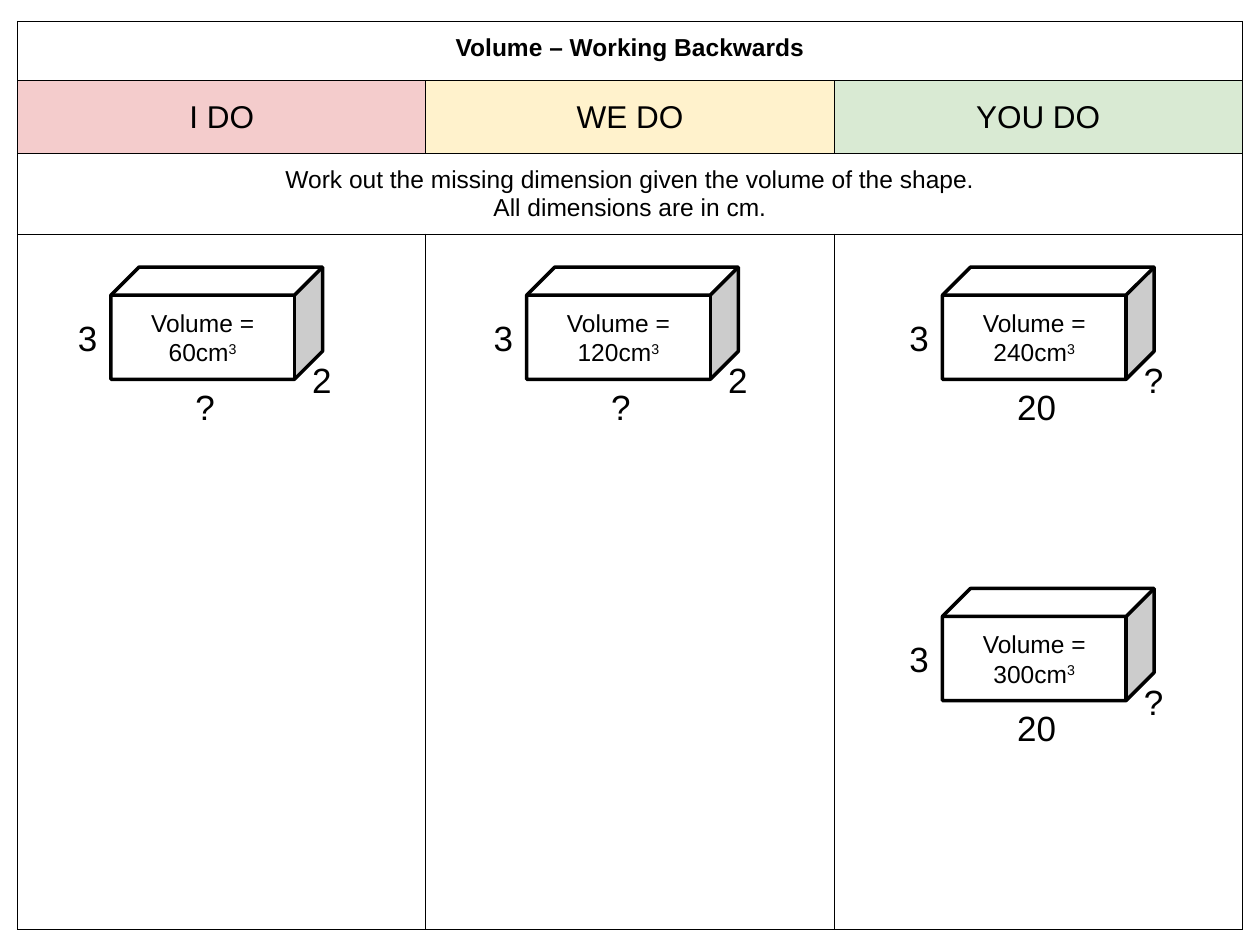
from lxml.etree import SubElement as Sub
from pptx import Presentation
from pptx.dml.color import RGBColor as Rgb
from pptx.enum.shapes import MSO_SHAPE as Shape
from pptx.enum.text import MSO_ANCHOR as Anchor, MSO_AUTO_SIZE as Fit, PP_ALIGN as Align
from pptx.oxml.ns import qn
from pptx.util import Inches, Pt

HUES = {"ink": "000000", "paper": "FFFFFF", "red": "F4CCCC", "gold": "FFF2CC", "green": "D9EAD3"}


def hue(name):
    """Return the named colour."""
    return Rgb.from_string(HUES[name])


def write(frame, text, size=14, bold=False, align=Align.CENTER, font="Arial", color="ink"):
    """Fill a frame, one paragraph a line, with a superscript after each caret."""
    for row, line in enumerate(text.split("\n")):
        para = frame.add_paragraph() if row else frame.paragraphs[0]
        para.alignment = align
        for rank, part in enumerate(line.split("^")):
            run = para.add_run()
            run.text = part
            run.font.name, run.font.size, run.font.bold = font, Pt(size), bold
            run.font.color.rgb = hue(color)
            if rank:
                run.font._element.set("baseline", "30000")


class Board:
    """Holds the style and the current slide."""

    def __init__(self, slide, edge=0.75, rim=2, pad=0.1):
        self.slide, self.edge, self.rim, self.pad = slide, edge, rim, pad

    def grid(self, left, top, cols, rows):
        """Add a plain bordered table."""
        box = [Inches(n) for n in (left, top, sum(cols), sum(rows))]
        table = self.slide.shapes.add_table(len(rows), len(cols), *box).table
        table.first_row = table.horz_banding = False
        for col, width in zip(table.columns, cols):
            col.width = Inches(width)
        for row, height in zip(table.rows, rows):
            row.height = Inches(height)
        for cell in table.iter_cells():
            self.frame(cell)
        return table

    def frame(self, cell):
        """Set the margins, borders and empty fill of a cell."""
        cell.margin_left = cell.margin_right = Inches(self.pad)
        cell.margin_top = cell.margin_bottom = Inches(self.pad)
        props = cell._tc.get_or_add_tcPr()
        for side in ("lnL", "lnR", "lnT", "lnB"):
            line = Sub(props, qn("a:" + side), w=str(Pt(self.edge)))
            Sub(Sub(line, qn("a:solidFill")), qn("a:srgbClr"), val=HUES["ink"])
        cell.fill.background()

    def cell(self, cell, text, fill=None, anchor=Anchor.MIDDLE, **style):
        """Write and colour a cell."""
        cell.vertical_anchor = anchor
        write(cell.text_frame, text, **style)
        if fill:
            cell.fill.solid()
            cell.fill.fore_color.rgb = hue(fill)

    def cube(self, left, top, text):
        """Add a cuboid with its volume."""
        box = [Inches(n) for n in (left, top, 1.68, 0.89)]
        cube = self.slide.shapes.add_shape(Shape.CUBE, *box)
        cube.shadow.inherit = False
        cube.fill.solid()
        cube.fill.fore_color.rgb = hue("paper")
        cube.line.color.rgb = hue("ink")
        cube.line.width = Pt(self.rim)
        cube.text_frame.word_wrap = True
        cube.text_frame.vertical_anchor = Anchor.MIDDLE
        write(cube.text_frame, text)

    def label(self, left, top, text):
        """Add the length of a side."""
        width = 0.2 + 0.155 * len(text)
        box = [Inches(n) for n in (left, top, width, 0.44)]
        frame = self.slide.shapes.add_textbox(*box).text_frame
        frame.word_wrap = False
        frame.auto_size = Fit.SHAPE_TO_FIT_TEXT
        write(frame, text, size=20, align=Align.LEFT)

    def task(self, left, top, volume, high, deep, wide):
        """Add a cuboid with its three sides."""
        self.cube(left, top, f"Volume = {volume}cm^3")
        self.label(left - 0.36, top + 0.34, high)
        self.label(left + 1.5, top + 0.68, deep)
        self.label(left + 0.65 - 0.0775 * len(wide), top + 0.89, wide)


def main():
    """Build the slide."""
    deck = Presentation()
    deck.slide_width, deck.slide_height = Inches(10), Inches(7.5)
    board = Board(deck.slides.add_slide(deck.slide_layouts[6]))

    table = board.grid(0.14, 0.17, [3.24] * 3, [0.47, 0.58, 0.64, 5.52])
    for row in (0, 2):
        table.cell(row, 0).merge(table.cell(row, 2))
    board.cell(table.cell(0, 0), "Volume – Working Backwards", anchor=Anchor.TOP, bold=True)
    heads = [("I DO", "red"), ("WE DO", "gold"), ("YOU DO", "green")]
    for col, (text, fill) in enumerate(heads):
        board.cell(table.cell(1, col), text, fill, size=18)
    board.cell(
        table.cell(2, 0),
        "Work out the missing dimension given the volume of the shape.\nAll dimensions are in cm.",
    )

    tasks = [
        (0, 0, 60, "3", "2", "?"),
        (1, 0, 120, "3", "2", "?"),
        (2, 0, 240, "3", "?", "20"),
        (2, 1, 300, "3", "?", "20"),
    ]
    for col, row, *sides in tasks:
        board.task(0.88 + 3.3 * col, 2.12 + 2.55 * row, *sides)

    deck.save("out.pptx")


if __name__ == "__main__":
    main()
